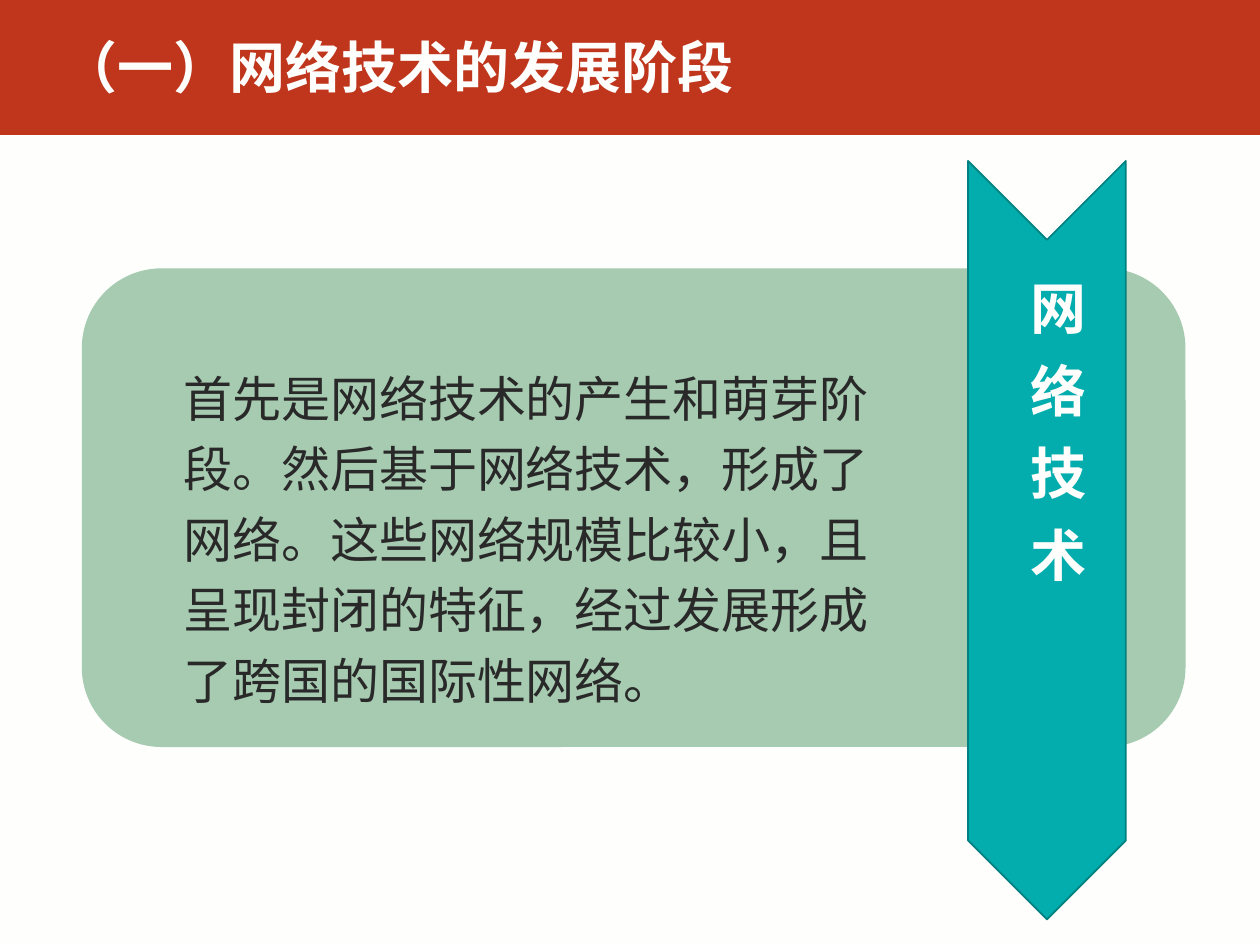
from dataclasses import dataclass
from typing import Optional

from lxml import etree
from pptx import Presentation
from pptx import util as u
from pptx.dml.color import RGBColor
from pptx.enum import shapes, text
from pptx.oxml import ns

FONT = "Noto Sans CJK SC"
PAPER = RGBColor(0xFE, 0xFE, 0xFC)
RED = RGBColor(0xBF, 0x36, 0x1C)
GREEN = RGBColor(0xA6, 0xCB, 0xB0)
TEAL = RGBColor(0x03, 0xAD, 0xAD)
DARK_TEAL = RGBColor(0x02, 0x80, 0x80)
INK = RGBColor(0x29, 0x29, 0x29)


@dataclass
class Box:
    left: float
    top: float
    width: float
    height: float

    def lengths(self) -> tuple:
        return tuple(u.Cm(v) for v in (self.left, self.top, self.width, self.height))


@dataclass
class Panel:
    kind: shapes.MSO_SHAPE
    box: Box
    fill: RGBColor
    line: Optional[RGBColor] = None
    rotation: float = 0


@dataclass
class Label:
    words: str
    box: Box
    size: float
    color: RGBColor
    bold: bool = False
    line_spacing: float = 1.0
    vertical: bool = False
    tracking: float = 0


HEADER = Panel(shapes.MSO_SHAPE.RECTANGLE, Box(0, 0, 25.4, 2.72), RED)
CARD = Panel(shapes.MSO_SHAPE.ROUNDED_RECTANGLE, Box(1.65, 5.41, 22.25, 9.65), GREEN)
RIBBON = Panel(shapes.MSO_SHAPE.CHEVRON, Box(13.46, 9.3, 15.29, 3.18), TEAL, DARK_TEAL, 90)

TITLE = Label("（一）网络技术的发展阶段", Box(0.99, 0.53, 19.2, 1.63), 32, PAPER, bold=True)
BODY = Label(
    "首先是网络技术的产生和萌芽阶段。然后基于网络技术，形成了网络。"
    "这些网络规模比较小，且呈现封闭的特征，经过发展形成了跨国的国际性网络。",
    Box(3.45, 7.06, 14.91, 7.44), 28, INK, line_spacing=1.2,
)
RIBBON_LABEL = Label("网络技术", Box(20.22, 5.41, 1.88, 10.72), 32, PAPER,
                     bold=True, vertical=True, tracking=15)


def draw_panel(s, panel: Panel):
    sp = s.shapes.add_shape(panel.kind, *panel.box.lengths())
    sp.shadow.inherit = False
    sp.rotation = panel.rotation
    sp.fill.solid()
    sp.fill.fore_color.rgb = panel.fill
    if panel.line is None:
        sp.line.fill.background()
    else:
        sp.line.color.rgb = panel.line
        sp.line.width = u.Pt(1)
    return sp


def write_label(sp, label: Label) -> None:
    sp.left, sp.top, sp.width, sp.height = label.box.lengths()
    tf = sp.text_frame
    tf.word_wrap = True
    tf.auto_size = text.MSO_AUTO_SIZE.NONE
    tf.vertical_anchor = text.MSO_ANCHOR.TOP
    if label.vertical:
        tf._txBody.bodyPr.set("vert", "eaVert")
    p = tf.paragraphs[0]
    p.text = label.words
    p.alignment = text.PP_ALIGN.LEFT
    p.line_spacing = label.line_spacing
    font = p.font
    font.name = FONT
    font.size = u.Pt(label.size)
    font.bold = label.bold
    font.color.rgb = label.color
    latin = font._element.find(ns.qn("a:latin"))
    ea = etree.Element(ns.qn("a:ea"), typeface=FONT)
    latin.addnext(ea)
    if label.tracking:
        font._element.set("spc", str(int(label.tracking * 100)))


def main() -> None:
    prs = Presentation()
    prs.slide_width, prs.slide_height = u.Cm(25.4), u.Cm(19.05)
    s = prs.slides.add_slide(prs.slide_layouts[5])
    s.background.fill.solid()
    s.background.fill.fore_color.rgb = PAPER

    header = draw_panel(s, HEADER)
    title = s.shapes.title
    header._element.addnext(title._element)
    write_label(title, TITLE)

    draw_panel(s, CARD)
    write_label(s.shapes.add_textbox(*BODY.box.lengths()), BODY)
    draw_panel(s, RIBBON)
    write_label(s.shapes.add_textbox(*RIBBON_LABEL.box.lengths()), RIBBON_LABEL)

    prs.save("out.pptx")


if __name__ == "__main__":
    main()
